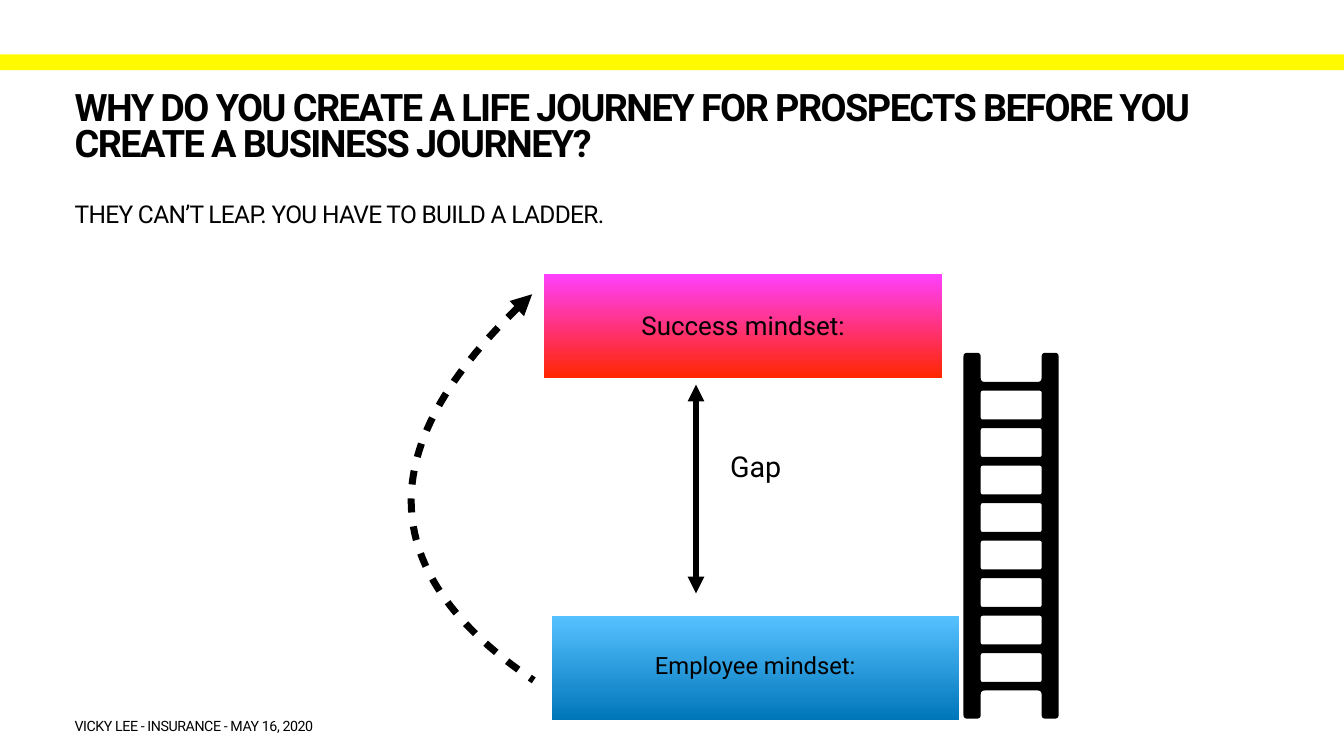
from lxml.etree import SubElement
from pptx import Presentation
from pptx.dml.color import RGBColor
from pptx.enum.shapes import MSO_CONNECTOR, MSO_SHAPE
from pptx.enum.text import MSO_ANCHOR, MSO_AUTO_SIZE, PP_ALIGN
from pptx.oxml.ns import qn
from pptx.util import Cm, Pt

COLORS = {
    "black": "000000", "yellow": "FFFA00",
    "pink": "FF40FF", "red": "FF2600",
    "sky": "56C1FF", "blue": "0076BA",
}
COLORS = {name: RGBColor.from_string(value) for name, value in COLORS.items()}


def write(shape, text, size, align=PP_ALIGN.LEFT, anchor=MSO_ANCHOR.TOP,
          inset=0.15, line_spacing=1.0, bold=False, tracking=0):
    frame = shape.text_frame
    frame.word_wrap = True
    frame.auto_size = MSO_AUTO_SIZE.NONE
    frame.vertical_anchor = anchor
    frame.margin_left = frame.margin_right = Cm(inset)
    frame.margin_top = frame.margin_bottom = Cm(inset)
    paragraph = frame.paragraphs[0]
    paragraph.alignment = align
    paragraph.line_spacing = line_spacing
    run = paragraph.add_run()
    run.text = text
    run.font.name = "Roboto"
    run.font.size = Pt(size)
    run.font.bold = bold
    run.font.color.rgb = COLORS["black"]
    if tracking:
        run.font._element.set("spc", str(tracking))


def rounded(corners, radius):
    """Points in EMU along a closed outline whose right-angled corners are rounded."""
    points = []
    for i, (x, y) in enumerate(corners):
        before, after = corners[i - 1], corners[(i + 1) % len(corners)]
        for t in (0, 0.25, 0.5, 0.75, 1):
            px, py = x, y
            for (nx, ny), weight in ((before, (1 - t) ** 2), (after, t ** 2)):
                distance = abs(nx - x) + abs(ny - y)
                px += (nx - x) / distance * radius * weight
                py += (ny - y) / distance * radius * weight
            points.append((Cm(px), Cm(py)))
    return points


prs = Presentation()
prs.slide_width, prs.slide_height = Cm(67.74), Cm(38.1)
slide = prs.slides.add_slide(prs.slide_layouts[5])
shapes = slide.shapes

# Yellow band
band = shapes.add_shape(MSO_SHAPE.RECTANGLE, 0, Cm(2.74), prs.slide_width, Cm(0.79))
band.shadow.inherit = False
band.fill.solid()
band.fill.fore_color.rgb = COLORS["yellow"]
band.line.fill.background()

# Title
title = shapes.title
title.left, title.top, title.width, title.height = Cm(3.61), Cm(4.5), Cm(60.76), Cm(4.93)
write(title, "WHY DO YOU CREATE A LIFE JOURNEY FOR PROSPECTS BEFORE YOU "
      "CREATE A BUSINESS JOURNEY?", 54, line_spacing=0.8, bold=True, tracking=-220)

# Subtitle, footer and gap label
for left, top, width, height, text, size, tracking in (
    (3.61, 9.86, 60.76, 1.93, "THEY CAN’T LEAP. YOU HAVE TO BUILD A LADDER.", 35, -100),
    (3.61, 35.99, 60.76, 1.19, "VICKY LEE - INSURANCE - MAY 16, 2020", 20.3, -60),
    (36.65, 22.48, 4.29, 2.79, "Gap", 41, 0),
):
    label = shapes.add_textbox(Cm(left), Cm(top), Cm(width), Cm(height))
    write(label, text, size, tracking=tracking)

# Mindset boxes
for left, top, width, text, size, spacing, start, end in (
    (27.81, 31.06, 20.52, "Employee mindset:", 34, 0.7, "sky", "blue"),
    (27.43, 13.79, 20.04, "Success mindset:", 37, 1.0, "pink", "red"),
):
    mindset = shapes.add_shape(MSO_SHAPE.RECTANGLE, Cm(left), Cm(top), Cm(width), Cm(5.23))
    mindset.shadow.inherit = False
    mindset.line.fill.background()
    mindset.fill.gradient()
    mindset.fill.gradient_angle = 270
    for stop, color in zip(mindset.fill.gradient_stops, (start, end)):
        stop.color.rgb = COLORS[color]
    write(mindset, text, size, PP_ALIGN.CENTER, MSO_ANCHOR.MIDDLE, 1.42, spacing)

# Dashed leap: a cubic curve from the upper box to the lower one
controls = ((26.82, 14.83), (18.67, 22.28), (18.69, 28.75), (26.9, 34.29))
curve = []
for step in range(61):
    t = step / 60
    weights = ((1 - t) ** 3, 3 * t * (1 - t) ** 2, 3 * t ** 2 * (1 - t), t ** 3)
    curve.append(tuple(Cm(sum(w * point[axis] for w, point in zip(weights, controls)))
                       for axis in (0, 1)))
builder = shapes.build_freeform(*curve[0])
builder.add_line_segments(curve[1:], close=False)
leap = builder.convert_to_shape()
leap.shadow.inherit = False
leap.fill.background()

# Gap arrow
gap = shapes.add_connector(MSO_CONNECTOR.STRAIGHT, Cm(35.08), Cm(29.9), Cm(35.08), Cm(19.38))
SubElement(gap._element.spPr, qn("a:effectLst"))

# Line styles and arrowheads
for arrow, width, dashed, ends in (
    (leap, 10, True, ("a:headEnd",)),
    (gap, 8, False, ("a:headEnd", "a:tailEnd")),
):
    arrow.line.width = Pt(width)
    arrow.line.color.rgb = COLORS["black"]
    line = arrow.line._get_or_add_ln()
    if dashed:
        SubElement(SubElement(line, qn("a:custDash")), qn("a:ds"), d="200000", sp="200000")
    for end in ends:
        SubElement(line, qn(end), type="triangle")

# Ladder: outer outline, then the openings between the rungs
left, inner_left, inner_right, right = 48.56, 49.43, 52.5, 53.36
top, first_rung, last_rung, bottom = 17.78, 19.25, 34.8, 36.22
outlines = [rounded([
    (left, top), (left, bottom), (inner_left, bottom), (inner_left, last_rung),
    (inner_right, last_rung), (inner_right, bottom), (right, bottom), (right, top),
    (inner_right, top), (inner_right, first_rung), (inner_left, first_rung),
    (inner_left, top)], 0.2)]
for opening in range(8):
    upper = 19.69 + 1.89 * opening
    lower = upper + 1.45
    outlines.append(rounded([(inner_left, upper), (inner_right, upper),
                             (inner_right, lower), (inner_left, lower)], 0.1))
builder = shapes.build_freeform(*outlines[0][0])
builder.add_line_segments(outlines[0][1:], close=True)
for outline in outlines[1:]:
    builder.move_to(*outline[0])
    builder.add_line_segments(outline[1:], close=True)
ladder = builder.convert_to_shape()
ladder.shadow.inherit = False
ladder.fill.solid()
ladder.fill.fore_color.rgb = COLORS["black"]
ladder.line.fill.background()

prs.save("out.pptx")
